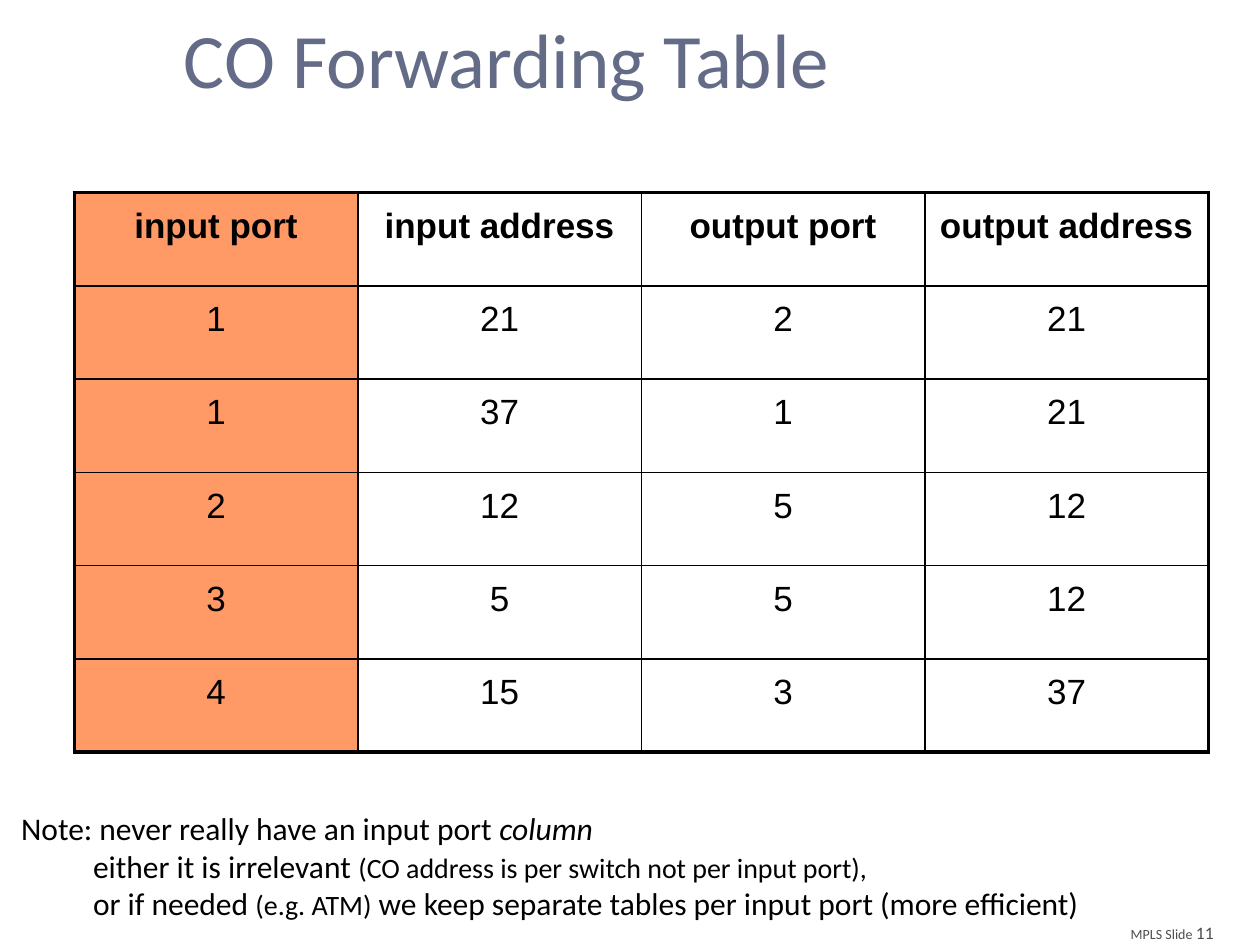
from lxml import etree
from pptx import Presentation
from pptx.dml.color import RGBColor
from pptx.enum.text import MSO_ANCHOR, PP_ALIGN
from pptx.oxml.ns import qn
from pptx.util import Inches, Pt

CENTER, LEFT, RIGHT = PP_ALIGN.CENTER, PP_ALIGN.LEFT, PP_ALIGN.RIGHT
TOP = MSO_ANCHOR.TOP
BLANK_LAYOUT = 6

COLORS = {
    "title": "646B86",
    "text": "000000",
    "footer": "4D4D4D",
    "border": "000000",
    "highlight": "FF9966",
}

FORWARDING_ROWS = [
    ["input port", "input address", "output port", "output address"],
    ["1", "21", "2", "21"],
    ["1", "37", "1", "21"],
    ["2", "12", "5", "12"],
    ["3", "5", "5", "12"],
    ["4", "15", "3", "37"],
]

# Each line is an indent in inches and its runs of (text, size, italic).
NOTE_LINES = [
    (0, [("Note: never really have an input port ", 18, False),
         ("column", 18, True)]),
    (0.57, [("either it is irrelevant ", 18, False),
            ("(CO address is per switch not per input port),", 16, False)]),
    (0.57, [("or if needed ", 18, False),
            ("(e.g. ATM)", 16, False),
            (" we keep separate tables per input port (more efficient)", 18, False)]),
]


def format_run(run, size, color, font="Calibri", bold=False, italic=False):
    run.font.name = font
    run.font.size = Pt(size)
    run.font.bold = bold
    run.font.italic = italic
    run.font.color.rgb = RGBColor.from_string(COLORS[color])


def add_text(slide, box, lines, color, alignment=LEFT, wrap=True):
    """Add a text box holding lines of (indent, runs)."""
    shape = slide.shapes.add_textbox(*(Inches(length) for length in box))
    frame = shape.text_frame
    frame.word_wrap = wrap
    frame.vertical_anchor = TOP
    for index, (indent, runs) in enumerate(lines):
        paragraph = frame.add_paragraph() if index else frame.paragraphs[0]
        paragraph.alignment = alignment
        if indent:
            paragraph._p.get_or_add_pPr().set("marL", str(Inches(indent)))
        for text, size, italic in runs:
            run = paragraph.add_run()
            run.text = text
            format_run(run, size, color, italic=italic)
    return shape


def add_title(slide, box):
    lines = [(0, [("CO Forwarding Table", 44, False)])]
    shape = add_text(slide, box, lines, "title", CENTER)
    shape.text_frame.margin_top = Inches(0.08)


def set_border(cell, side, width):
    line = etree.SubElement(cell._tc.get_or_add_tcPr(), qn(f"a:ln{side}"), w=str(Pt(width)))
    fill = etree.SubElement(line, qn("a:solidFill"))
    etree.SubElement(fill, qn("a:srgbClr"), val=COLORS["border"])


def add_forwarding_table(slide, box):
    row_count, column_count = len(FORWARDING_ROWS), len(FORWARDING_ROWS[0])
    table = slide.shapes.add_table(
        row_count, column_count, *(Inches(length) for length in box)).table
    table.horz_banding = False
    for row, values in enumerate(FORWARDING_ROWS):
        for column, value in enumerate(values):
            cell = table.cell(row, column)
            outer_sides = {
                "L": column == 0,
                "R": column == column_count - 1,
                "T": row == 0,
                "B": row == row_count - 1,
            }
            for side, is_outer in outer_sides.items():
                set_border(cell, side, 2.25 if is_outer else 1)
            if column == 0:
                cell.fill.solid()
                cell.fill.fore_color.rgb = RGBColor.from_string(COLORS["highlight"])
            else:
                cell.fill.background()
            cell.text = value
            paragraph = cell.text_frame.paragraphs[0]
            paragraph.alignment = CENTER
            paragraph.line_spacing = 1.2
            format_run(paragraph.runs[0], 20, "text", "Arial", bold=row == 0)


def add_note(slide, box):
    add_text(slide, box, NOTE_LINES, "text")


def add_footer(slide, box):
    lines = [(0, [("MPLS Slide ", 8, False), ("11", 10, False)])]
    add_text(slide, box, lines, "footer", RIGHT, wrap=False)


def main():
    presentation = Presentation()
    presentation.slide_width = Inches(10)
    presentation.slide_height = Inches(7.5)
    slide = presentation.slides.add_slide(presentation.slide_layouts[BLANK_LAYOUT])
    add_footer(slide, (8.84, 7.27, 0.89, 0.27))
    add_title(slide, (0.39, 0.01, 7.26, 1.09))
    add_forwarding_table(slide, (0.59, 1.53, 9, 4.44))
    add_note(slide, (0.07, 6.37, 8.77, 1.01))
    presentation.save("out.pptx")


if __name__ == "__main__":
    main()
